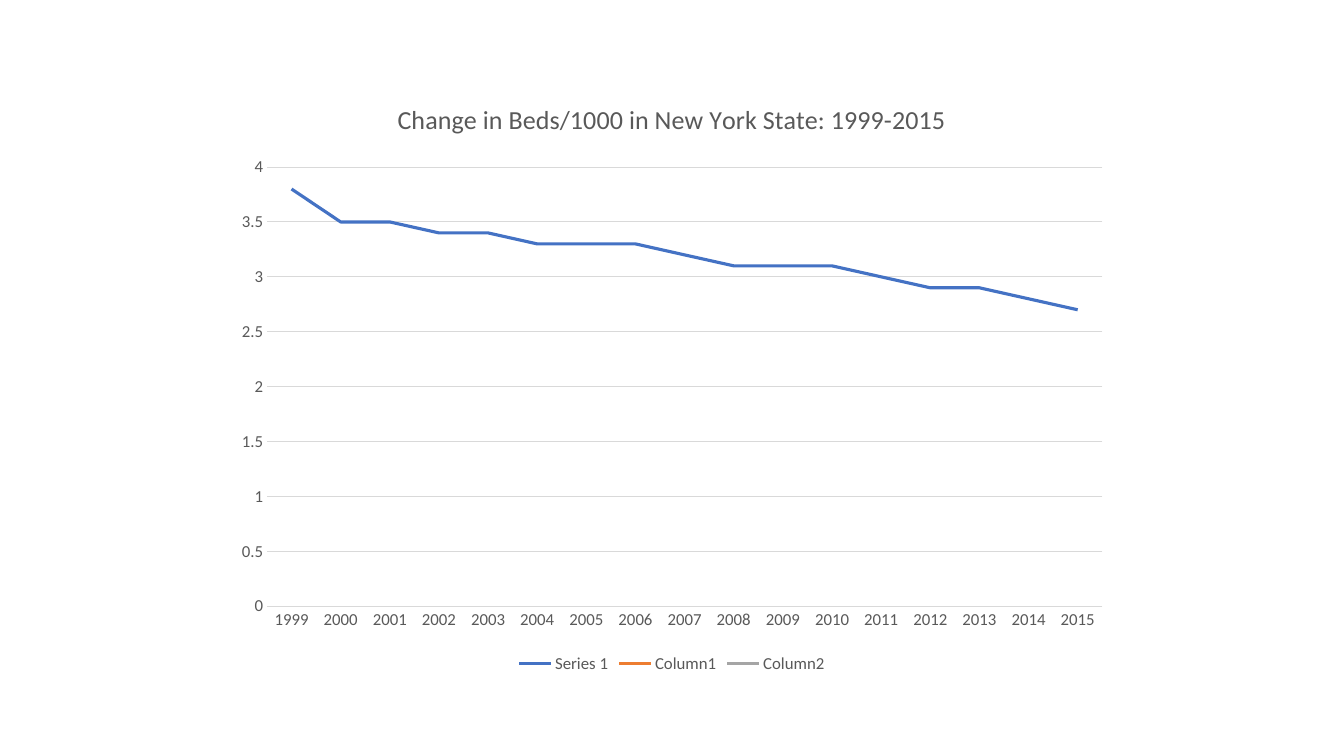
from pptx import Presentation
from pptx.chart.data import CategoryChartData
from pptx.dml.color import RGBColor
from pptx.enum.chart import (
    XL_CHART_TYPE as ChartType,
    XL_LEGEND_POSITION as LegendPosition,
    XL_TICK_MARK as TickMark,
)
from pptx.util import Inches, Pt

TITLE = "Change in Beds/1000 in New York State: 1999-2015"
YEARS = [str(year) for year in range(1999, 2016)]
BEDS = [3.8, 3.5, 3.5, 3.4, 3.4, 3.3, 3.3, 3.3, 3.2,
        3.1, 3.1, 3.1, 3, 2.9, 2.9, 2.8, 2.7]
NO_BEDS = [None] * len(YEARS)
SERIES = [
    ("Series 1", BEDS, "4472C4"),
    ("Column1", NO_BEDS, "ED7D31"),
    ("Column2", NO_BEDS, "A5A5A5"),
]
TEXT_GREY, GRID_GREY = "595959", "D9D9D9"


def set_all(target, values):
    for name, value in values.items():
        setattr(target, name, value)


def paint(color_format, hex_color):
    color_format.rgb = RGBColor.from_string(hex_color)


def style_font(font, size):
    set_all(font, {"name": "Calibri", "size": Pt(size), "bold": False})
    paint(font.color, TEXT_GREY)


def style_line(line, hex_color, width):
    paint(line.color, hex_color)
    line.width = Pt(width)


def style_axis(axis):
    set_all(axis, {"major_tick_mark": TickMark.NONE,
                   "minor_tick_mark": TickMark.NONE})
    style_font(axis.tick_labels.font, 12)


def add_beds_chart(slide):
    beds_data = CategoryChartData(number_format="General")
    beds_data.categories = YEARS
    for name, values, _ in SERIES:
        beds_data.add_series(name, values)
    chart = slide.shapes.add_chart(
        ChartType.LINE, Inches(2.22), Inches(0.79),
        Inches(8.89), Inches(5.93), beds_data).chart
    style_font(chart.font, 12)

    # Lines
    for series, (_, _, color) in zip(chart.plots[0].series, SERIES):
        series.smooth = False
        style_line(series.format.line, color, 2.25)
    return chart


def style_axes(chart):
    years, beds = chart.category_axis, chart.value_axis
    for axis in (years, beds):
        style_axis(axis)
    style_line(years.format.line, GRID_GREY, 0.75)
    set_all(beds, {"minimum_scale": 0, "maximum_scale": 4,
                   "major_unit": 0.5, "has_major_gridlines": True})
    beds.format.line.fill.background()
    style_line(beds.major_gridlines.format.line, GRID_GREY, 0.75)


def add_title_and_legend(chart):
    chart.has_title = True
    heading = chart.chart_title.text_frame
    heading.text = TITLE
    style_font(heading.paragraphs[0].runs[0].font, 18.6)
    chart.has_legend = True
    set_all(chart.legend, {"position": LegendPosition.BOTTOM,
                           "include_in_layout": False})
    style_font(chart.legend.font, 12)


def main():
    deck = Presentation()
    set_all(deck, {"slide_width": Inches(13.33), "slide_height": Inches(7.5)})
    # Blank layout: the heading belongs to the chart
    slide = deck.slides.add_slide(deck.slide_layouts[6])
    chart = add_beds_chart(slide)
    style_axes(chart)
    add_title_and_legend(chart)
    deck.save("out.pptx")


if __name__ == "__main__":
    main()
